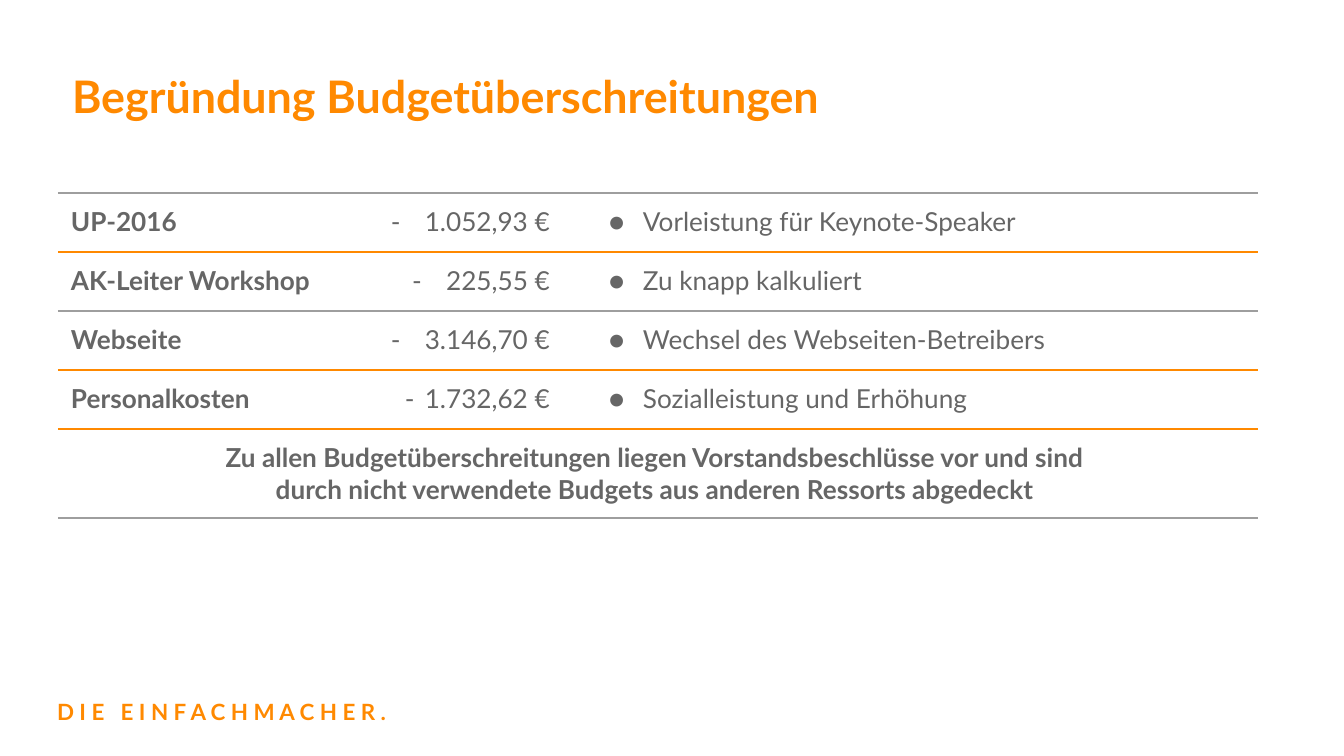
from lxml.etree import SubElement
from pptx import Presentation
from pptx.dml.color import RGBColor
from pptx.enum.text import MSO_ANCHOR, MSO_AUTO_SIZE, PP_ALIGN
from pptx.oxml import parse_xml
from pptx.oxml.ns import nsdecls, qn
from pptx.util import Emu, Pt

ORANGE = "FF8900"
GRAY = "666666"
RULE_GRAY = "9E9E9E"


def px(length):
    return Emu(round(length * 914400 / 134.4))


def color(value):
    return RGBColor.from_string(value)


class SlideBuilder:
    font_name = "Lato"
    inset = px(13)

    def __init__(self, slide):
        self.slide = slide

    def style(self, paragraph, size, shade, bold, align=PP_ALIGN.LEFT):
        paragraph.alignment = align
        for run in paragraph.runs:
            run.font.name = self.font_name
            run.font.size = Pt(size)
            run.font.bold = bold
            run.font.color.rgb = color(shade)

    def frame(self, shape, text, size):
        frame = shape.text_frame
        frame.word_wrap = True
        frame.auto_size = MSO_AUTO_SIZE.NONE
        frame.vertical_anchor = MSO_ANCHOR.TOP
        frame.margin_left = frame.margin_right = self.inset
        frame.margin_top = frame.margin_bottom = self.inset
        frame.text = text
        self.style(frame.paragraphs[0], size, ORANGE, True)
        return frame

    def title(self, text, left, top, width, height):
        heading = self.slide.shapes.title
        heading.left, heading.top = px(left), px(top)
        heading.width, heading.height = px(width), px(height)
        self.frame(heading, text, 24).paragraphs[0].line_spacing = 1.15

    def label(self, text, left, top, width, height):
        box = self.slide.shapes.add_textbox(px(left), px(top), px(width), px(height))
        self.frame(box, text, 12)

    def table(self, left, top, widths, heights):
        table = self.slide.shapes.add_table(
            len(heights), len(widths), px(left), px(top), px(sum(widths)), px(sum(heights))
        ).table
        table.first_row = table.horz_banding = False
        for column, width in zip(table.columns, widths):
            column.width = px(width)
        for row, height in zip(table.rows, heights):
            row.height = px(height)
        return table

    def cell(self, cell, text, bold=False, align=PP_ALIGN.LEFT, bullet=None, hanging=34):
        cell.margin_left = cell.margin_right = self.inset
        cell.margin_top = cell.margin_bottom = self.inset
        cell.text_frame.text = text
        for paragraph in cell.text_frame.paragraphs:
            if bullet:
                self.bullet(paragraph, bullet, hanging)
            self.style(paragraph, 14, GRAY, bold, align)

    def bullet(self, paragraph, character, hanging):
        properties = paragraph._p.get_or_add_pPr()
        properties.set("marL", str(px(67)))
        properties.set("indent", str(-px(hanging)))
        tint = SubElement(properties, qn("a:buClr"))
        SubElement(tint, qn("a:srgbClr")).set("val", GRAY)
        SubElement(properties, qn("a:buFont")).set("typeface", self.font_name)
        SubElement(properties, qn("a:buChar")).set("char", character)

    def rules(self, cell, above, below):
        cell.fill.background()
        edges = {"lnL": None, "lnR": None, "lnT": above, "lnB": below}
        for position, (edge, shade) in enumerate(edges.items()):
            fill = f'<a:solidFill><a:srgbClr val="{shade}"/></a:solidFill>' if shade else "<a:noFill/>"
            line = parse_xml(f'<a:{edge} {nsdecls("a")} w="{Pt(0.75)}">{fill}</a:{edge}>')
            cell._tc.get_or_add_tcPr().insert(position, line)


def main():
    presentation = Presentation()
    presentation.slide_width, presentation.slide_height = px(1344), px(756)
    builder = SlideBuilder(presentation.slides.add_slide(presentation.slide_layouts[5]))

    builder.label(" ".join("DIE EINFACHMACHER."), 44, 685, 417, 55)
    builder.title("Begründung Budgetüberschreitungen", 59, 48, 1236, 86)

    overruns = [
        ("UP-2016", "1.052,93 €", "Vorleistung für Keynote-Speaker", 34),
        ("AK-Leiter Workshop", "225,55 €", "Zu knapp kalkuliert", 34),
        ("Webseite", "3.146,70 €", "Wechsel des Webseiten-Betreibers", 34),
        ("Personalkosten", "1.732,62 €", "Sozialleistung und Erhöhung", 20),
    ]
    budget = builder.table(58, 193, [271, 234, 695], [59] * len(overruns) + [89])
    for row, (item, amount, reason, hanging) in enumerate(overruns):
        builder.cell(budget.cell(row, 0), item, bold=True)
        builder.cell(budget.cell(row, 1), amount, align=PP_ALIGN.RIGHT, bullet="-", hanging=hanging)
        builder.cell(budget.cell(row, 2), reason, bullet="●")

    conclusion = budget.cell(len(overruns), 0)
    conclusion.merge(budget.cell(len(overruns), 2))
    builder.cell(
        conclusion,
        "Zu allen Budgetüberschreitungen liegen Vorstandsbeschlüsse vor und sind \n"
        "durch nicht verwendete Budgets aus anderen Ressorts abgedeckt ",
        bold=True,
        align=PP_ALIGN.CENTER,
    )

    rule_colors = [RULE_GRAY, ORANGE, RULE_GRAY, ORANGE, ORANGE, RULE_GRAY]
    for row, (above, below) in enumerate(zip(rule_colors, rule_colors[1:])):
        for column in range(3):
            builder.rules(budget.cell(row, column), above, below)

    presentation.save("out.pptx")


if __name__ == "__main__":
    main()
